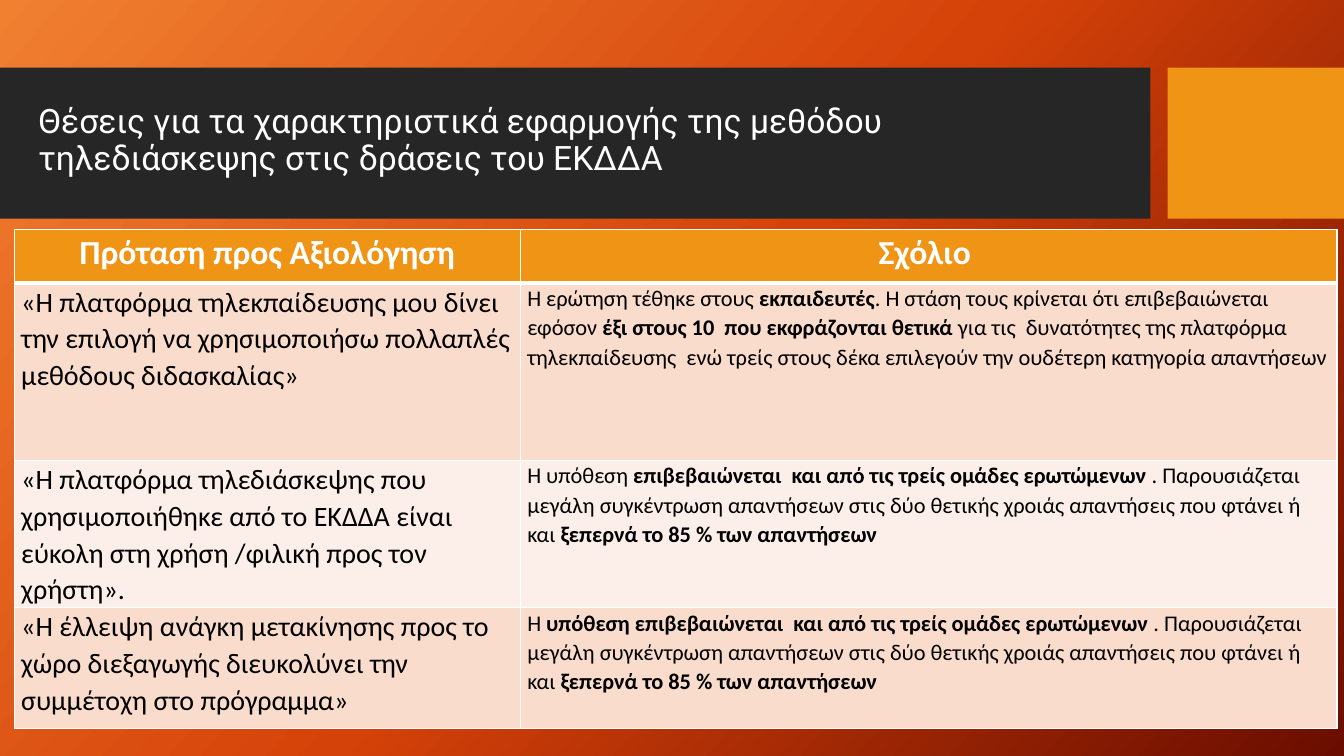
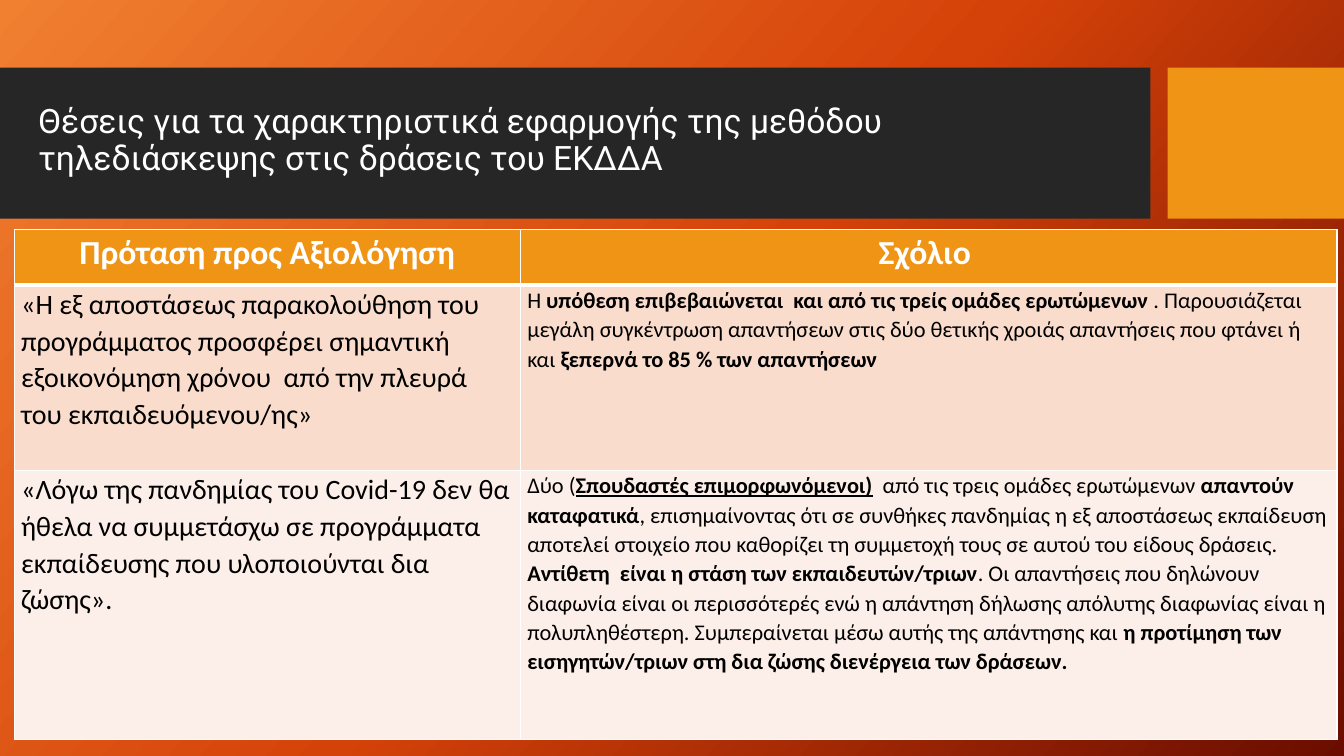
"""Build two slides that tabulate teleconferencing statements with their comments."""
from copy import deepcopy

from lxml import etree
from pptx import Presentation
from pptx.dml.color import RGBColor
from pptx.enum.shapes import MSO_SHAPE
from pptx.enum.text import MSO_ANCHOR, PP_ALIGN
from pptx.oxml.ns import qn
from pptx.util import Inches, Pt

COLORS = {
    "band": "262626",
    "accent": "F09415",
    "odd_row": "F9DCCC",
    "even_row": "FCEEE8",
    "white": "FFFFFF",
    "black": "000000",
}
GRADIENT = [(0, "F18031"), (0.5, "D54209"), (1, "6A0D00")]
TITLE = "Θέσεις για τα χαρακτηριστικά εφαρμογής της μεθόδου τηλεδιάσκεψης στις δράσεις του ΕΚΔΔΑ"
HEADERS = ["Πρόταση προς Αξιολόγηση", "Σχόλιο "]
COLUMN_WIDTHS = [5.02, 8.1]

BOLD = {"bold": True}
HIGH_AGREEMENT = [
    (". Παρουσιάζεται μεγάλη συγκέντρωση απαντήσεων στις δύο θετικής χροιάς απαντήσεις που φτάνει ή και ", {}),
    ("ξεπερνά το 85 % των απαντήσεων", BOLD),
]
CONFIRMED = [
    ("Η ", {}),
    ("υπόθεση επιβεβαιώνεται  και από τις τρείς ομάδες ερωτώμενων ", BOLD),
    *HIGH_AGREEMENT,
]

PAGES = [
    {
        "heights": [0.53, 1.76, 1.46, 1.2],
        "rows": [
            (
                "«Η πλατφόρμα τηλεκπαίδευσης μου δίνει την επιλογή να χρησιμοποιήσω πολλαπλές μεθόδους διδασκαλίας»",
                [
                    ("Η ερώτηση τέθηκε στους ", {}),
                    ("εκπαιδευτές", BOLD),
                    (". Η στάση τους κρίνεται ότι επιβεβαιώνεται εφόσον ", {}),
                    ("έξι στους 10  που εκφράζονται θετικά", BOLD),
                    (" για τις  δυνατότητες της πλατφόρμα τηλεκπαίδευσης  ενώ τρείς στους δέκα "
                     "επιλεγούν την ουδέτερη κατηγορία απαντήσεων", {}),
                ],
            ),
            (
                "«Η πλατφόρμα τηλεδιάσκεψης που χρησιμοποιήθηκε από το ΕΚΔΔΑ είναι εύκολη στη χρήση "
                "/φιλική προς τον χρήστη».",
                [
                    ("Η υπόθεση ", {}),
                    ("επιβεβαιώνεται  και από τις τρείς ομάδες ερωτώμενων ", BOLD),
                    *HIGH_AGREEMENT,
                ],
            ),
            (
                "«Η έλλειψη ανάγκη μετακίνησης προς το χώρο διεξαγωγής διευκολύνει την συμμέτοχη στο πρόγραμμα»",
                CONFIRMED,
            ),
        ],
    },
    {
        "heights": [0.55, 1.84, 2.67],
        "rows": [
            (
                "«Η εξ αποστάσεως παρακολούθηση του προγράμματος προσφέρει σημαντική εξοικονόμηση χρόνου  "
                "από την πλευρά του εκπαιδευόμενου/ης»",
                CONFIRMED,
            ),
            (
                "«Λόγω της πανδημίας του Covid-19 δεν θα ήθελα να συμμετάσχω σε προγράμματα εκπαίδευσης "
                "που υλοποιούνται δια ζώσης».",
                [
                    ("Δύο (", {}),
                    ("Σπουδαστές επιμορφωνόμενοι)", {"bold": True, "underline": True}),
                    ("  από τις τρεις ομάδες ερωτώμενων ", {}),
                    ("απαντούν καταφατικά", BOLD),
                    (", επισημαίνοντας ότι σε συνθήκες πανδημίας η εξ αποστάσεως εκπαίδευση αποτελεί "
                     "στοιχείο που καθορίζει τη συμμετοχή τους σε αυτού του είδους δράσεις. ", {}),
                    ("Αντίθετη  είναι η στάση των εκπαιδευτών/τριων", BOLD),
                    (". Οι απαντήσεις που δηλώνουν διαφωνία είναι οι περισσότερές ενώ η απάντηση δήλωσης "
                     "απόλυτης διαφωνίας είναι η πολυπληθέστερη. Συμπεραίνεται μέσω αυτής της απάντησης και ", {}),
                    ("η προτίμηση των εισηγητών/τριων στη δια ζώσης διενέργεια των δράσεων.", BOLD),
                ],
            ),
        ],
    },
]


def add_span(para, text, size=16, font="Calibri", color="black", bold=False, underline=False):
    span = para.add_run()
    span.text = text
    span.font.name = font
    span.font.size = Pt(size)
    span.font.bold = bold
    span.font.underline = underline
    span.font.color.rgb = RGBColor.from_string(COLORS[color])


def format_cell(cell, fill, bottom_width):
    cell.margin_left = cell.margin_right = Inches(0.07)
    cell.margin_top = cell.margin_bottom = 0
    cell.fill.solid()
    cell.fill.fore_color.rgb = RGBColor.from_string(COLORS[fill])
    properties = cell.fill._xPr
    for index, side in enumerate(["lnL", "lnR", "lnT", "lnB"]):
        width = bottom_width if side == "lnB" else 1
        border = etree.Element(qn(f"a:{side}"), w=str(Pt(width)))
        border_fill = etree.SubElement(border, qn("a:solidFill"))
        etree.SubElement(border_fill, qn("a:srgbClr"), val=COLORS["white"])
        properties.insert(index, border)


deck = Presentation()
deck.slide_width = Inches(13.33)
deck.slide_height = Inches(7.5)
layout = deck.slide_layouts[5]

background = layout.background.fill
background.gradient()
background.gradient_angle = 318
stop_list = next(layout.element.iter(qn("a:gsLst")))
stop_list.append(deepcopy(stop_list[-1]))
for stop, (position, color) in zip(background.gradient_stops, GRADIENT):
    stop.position = position
    stop.color.rgb = RGBColor.from_string(color)

layout_title = layout.placeholders[0]
layout_title.left, layout_title.top = Inches(0.28), Inches(0.81)
layout_title.width, layout_title.height = Inches(10.51), Inches(1.18)

pages = [deck.slides.add_slide(layout) for _ in PAGES]

for index, (left, width, color) in enumerate([(0, 11.41, "band"), (11.58, 1.75, "accent")]):
    band = pages[0].shapes.add_shape(
        MSO_SHAPE.RECTANGLE, Inches(left), Inches(0.67), Inches(width), Inches(1.5))
    band.shadow.inherit = False
    band.fill.solid()
    band.fill.fore_color.rgb = RGBColor.from_string(COLORS[color])
    band.line.fill.background()
    layout.shapes.element.insert(2 + index, band.element)

for page, content in zip(pages, PAGES):
    title_frame = page.shapes.title.text_frame
    title_frame.vertical_anchor = MSO_ANCHOR.MIDDLE
    title_para = title_frame.paragraphs[0]
    title_para.alignment = PP_ALIGN.LEFT
    title_para.line_spacing = 0.9
    add_span(title_para, TITLE, size=24, font="Roboto", color="white")

    heights = content["heights"]
    table = page.shapes.add_table(
        len(heights), len(COLUMN_WIDTHS), Inches(0.14), Inches(2.28),
        Inches(sum(COLUMN_WIDTHS)), Inches(sum(heights))).table
    for column, width in zip(table.columns, COLUMN_WIDTHS):
        column.width = Inches(width)
    for row, height in zip(table.rows, heights):
        row.height = Inches(height)

    for cell, header in zip(table.rows[0].cells, HEADERS):
        format_cell(cell, "accent", 3)
        para = cell.text_frame.paragraphs[0]
        para.alignment = PP_ALIGN.CENTER
        para.line_spacing = 1.07
        add_span(para, header, size=24, color="white", bold=True)

    for number, (statement, comment) in enumerate(content["rows"], start=1):
        cells = table.rows[number].cells
        for cell, size, spans in zip(cells, [20, 16], [[(statement, {})], comment]):
            format_cell(cell, "odd_row" if number % 2 else "even_row", 1)
            para = cell.text_frame.paragraphs[0]
            para.line_spacing = 1.07
            for text, style in spans:
                add_span(para, text, size=size, **style)

deck.save("out.pptx")
